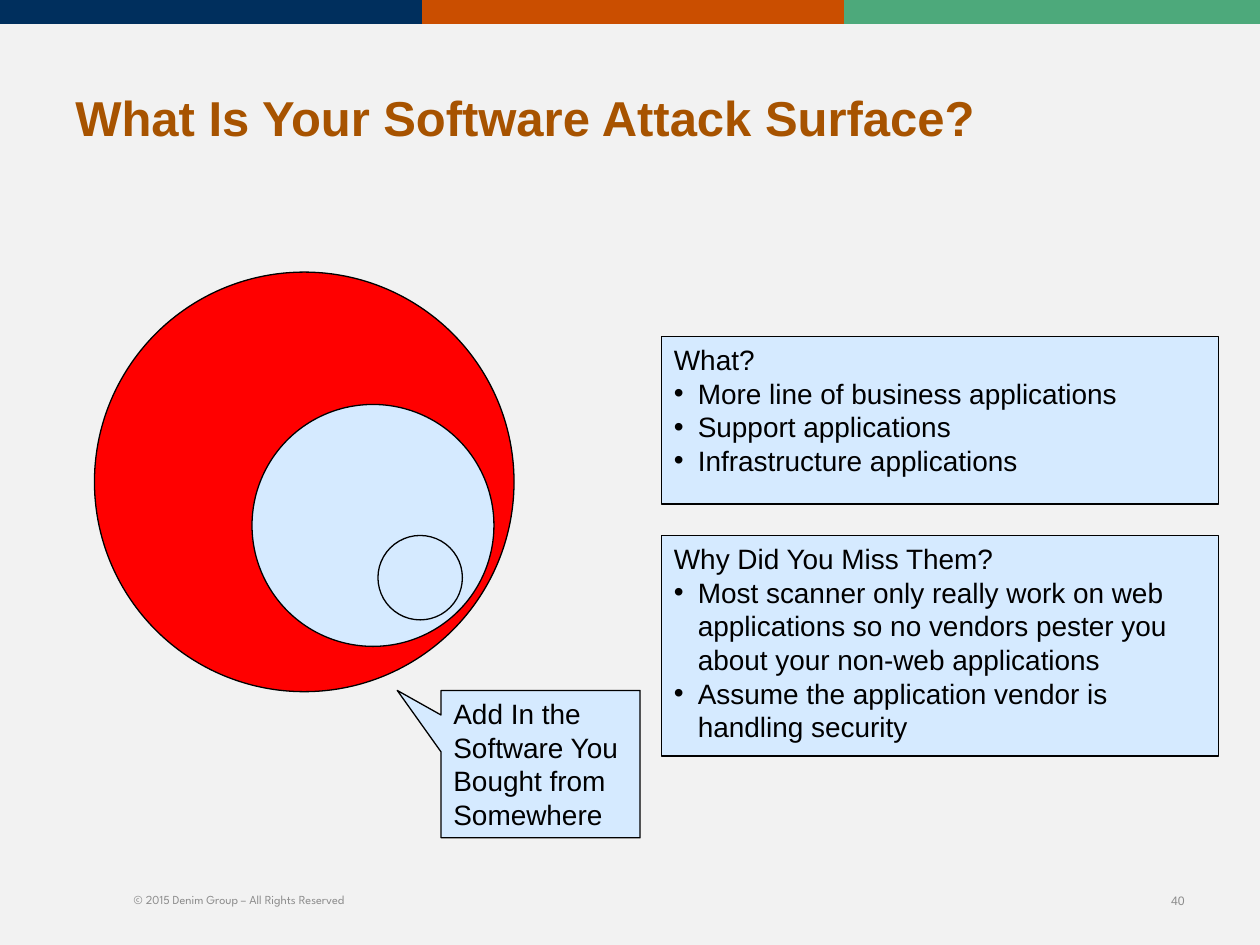
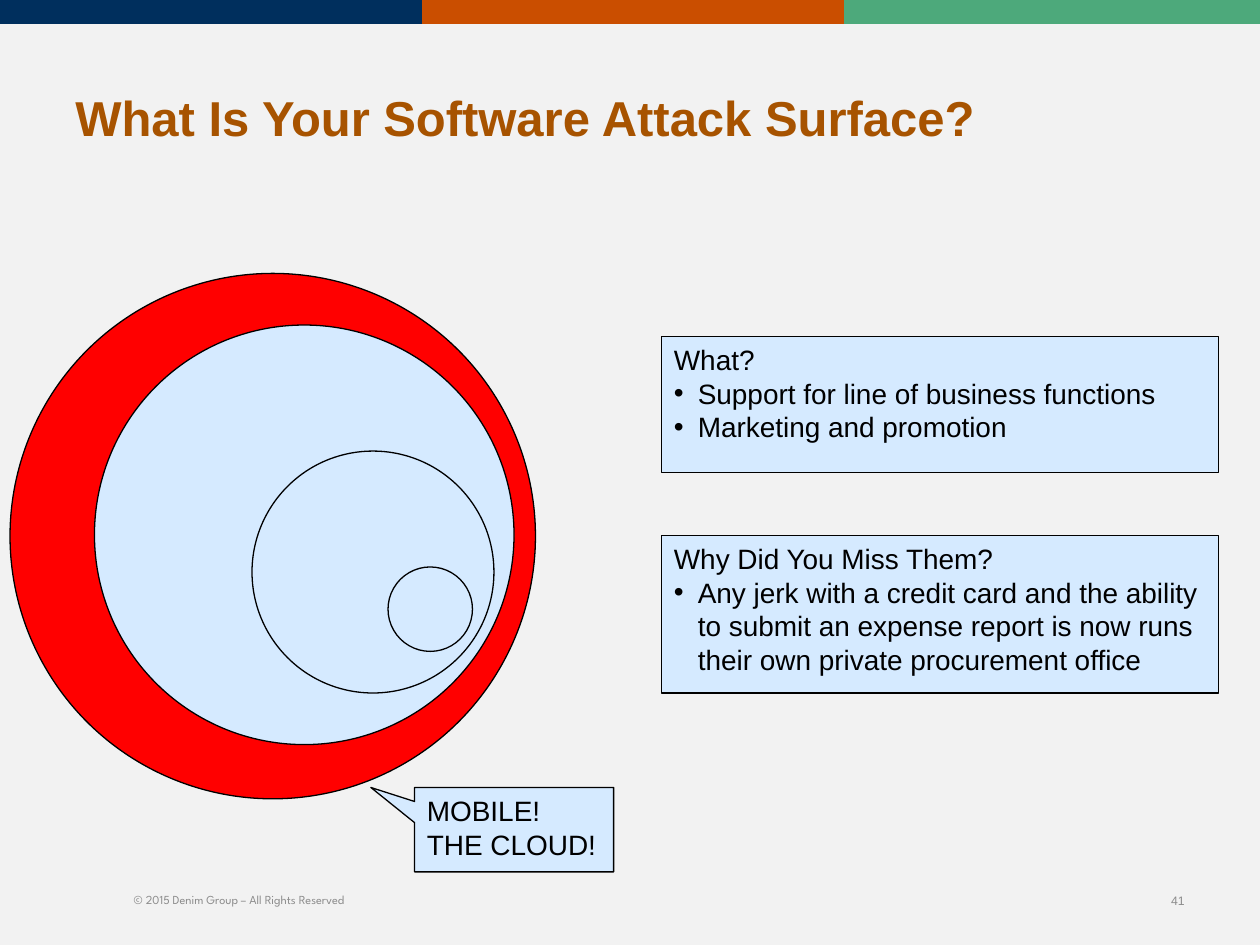
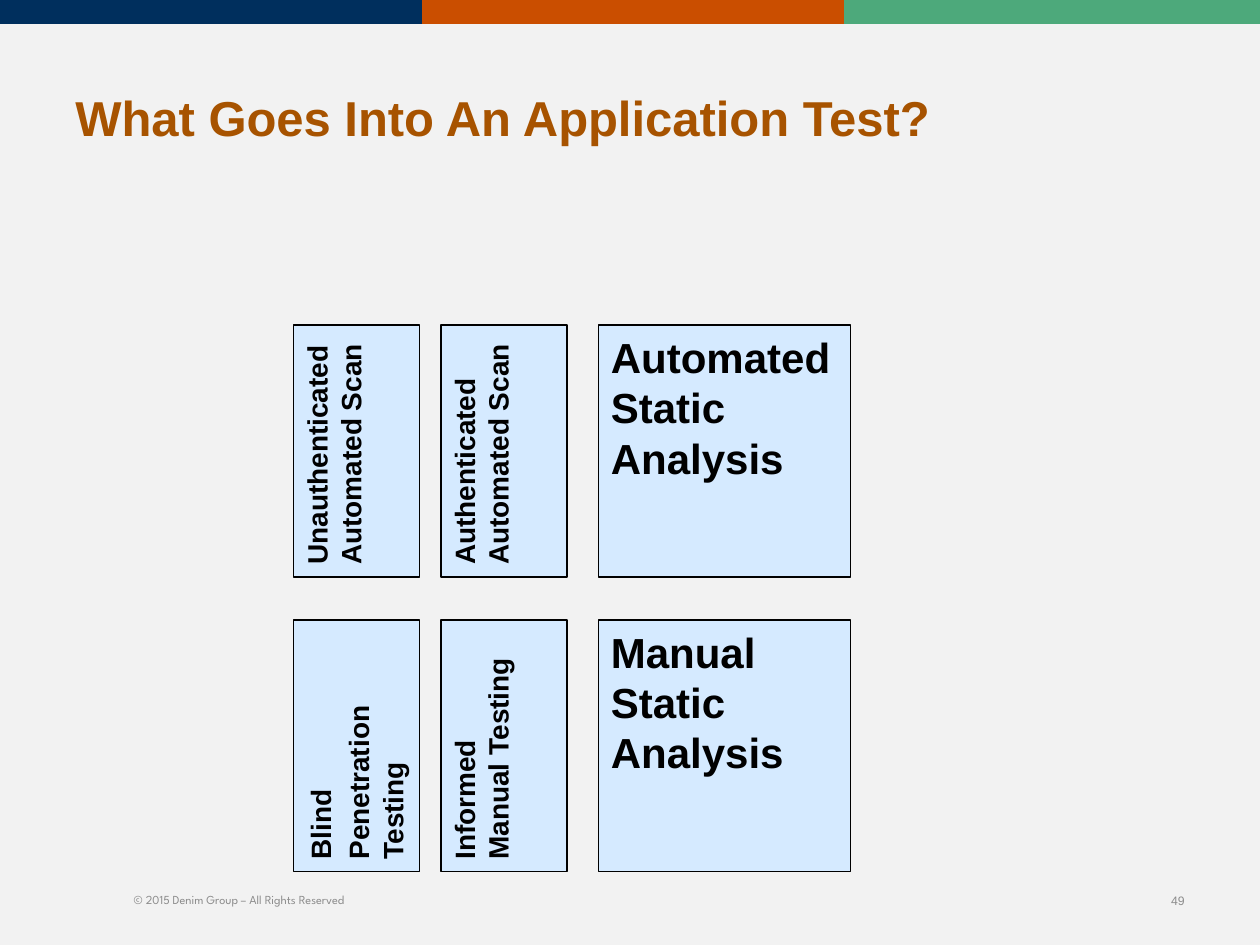
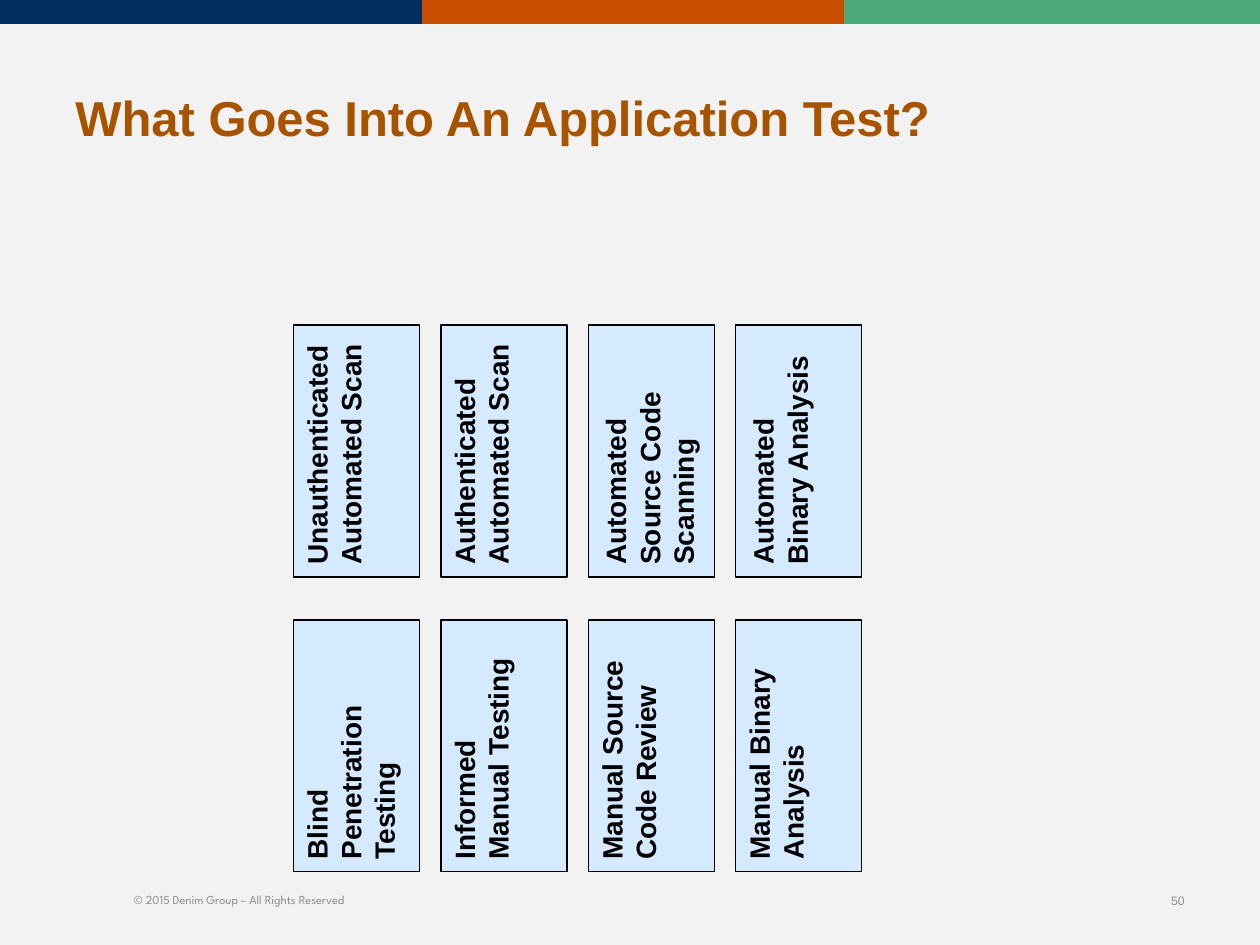
from lxml import etree
from pptx import Presentation
from pptx import util as u
from pptx.dml.color import RGBColor
from pptx.enum import shapes, text
from pptx.oxml.ns import qn

NAVY = RGBColor(0x00, 0x2F, 0x5D)
ORANGE = RGBColor(0xCA, 0x4E, 0x00)
GREEN = RGBColor(0x4D, 0xA9, 0x7B)
RUST = RGBColor(0xA7, 0x53, 0x00)
GRAY = RGBColor(0x8C, 0x8C, 0x8C)
PAPER = RGBColor(0xF2, 0xF2, 0xF2)
SKY = RGBColor(0xD5, 0xEA, 0xFF)
RED = RGBColor(0xFF, 0x00, 0x00)
BLACK = RGBColor(0x00, 0x00, 0x00)

KIND = shapes.MSO_SHAPE
MIDDLE = text.MSO_ANCHOR.MIDDLE
RIGHT = text.PP_ALIGN.RIGHT

COPYRIGHT = "© 2015 Denim Group – All Rights Reserved"
SURFACE_TITLE = "What Is Your Software Attack Surface?"
TEST_TITLE = "What Goes Into An Application Test?"
BANDS = [(NAVY, 3.35), (ORANGE, 3.35), (GREEN, 3.3)]

# Circles are (left, top, diameter), outermost first; panels are (top, height, lines).
SURFACES = [
    {
        "number": 40,
        "circles": [(0.75, 2.16, 3.33), (2, 3.21, 1.92), (3, 4.25, 0.67)],
        "callout": ((3.5, 5.48, 1.58, 1.17),
                    ["Add In the Software You Bought from Somewhere"]),
        "panels": [
            (2.67, 1.33, ["What?",
                          "More line of business applications",
                          "Support applications",
                          "Infrastructure applications"]),
            (4.25, 1.75, ["Why Did You Miss Them?",
                          "Most scanner only really work on web applications so no vendors "
                          "pester you about your non-web applications",
                          "Assume the application vendor is handling security"]),
        ],
    },
    {
        "number": 41,
        "circles": [(0.08, 2.17, 4.17), (0.75, 2.58, 3.33), (2, 3.58, 1.92), (3.08, 4.5, 0.67)],
        "callout": ((3.29, 6.25, 1.58, 0.67), ["MOBILE!", "THE CLOUD!"]),
        "panels": [
            (2.67, 1.08, ["What?",
                          "Support for line of business functions",
                          "Marketing and promotion"]),
            (4.25, 1.25, ["Why Did You Miss Them?",
                          "Any jerk with a credit card and the ability to submit an expense "
                          "report is now runs their own private procurement office"]),
        ],
    },
]

SCANS = [["Unauthenticated Automated Scan"], ["Authenticated Automated Scan"]]
INFORMED = ["Informed", "Manual Testing"]
TESTS = [
    {
        "number": 49,
        "narrow": [SCANS, [[("Blind", ""), ("Penetration", "Testing")], INFORMED]],
        "wide": ["Automated Static Analysis", "Manual Static Analysis"],
    },
    {
        "number": 50,
        "narrow": [
            SCANS + [[("Automated", "Source Code Scanning")], [("Automated", "Binary Analysis")]],
            [["Blind", "Penetration Testing"], INFORMED,
             ["Manual Source Code Review"], ["Manual Binary Analysis"]],
        ],
        "wide": [],
    },
]
GRID_LEFT, GRID_TOP = 2.33, 2.58
COLUMN_STEP, ROW_STEP = 1.17, 2.34
WIDE_LEFT, TILE = 4.75, 2
WORD_GAP_SIZE = 18


def add_bullet(paragraph):
    properties = paragraph._p.get_or_add_pPr()
    properties.set("marL", str(u.Inches(0.19)))
    properties.set("indent", str(u.Inches(-0.19)))
    etree.SubElement(properties, qn("a:buFont")).set("typeface", "Arial")
    etree.SubElement(properties, qn("a:buChar")).set("char", "•")


def write(holder, lines, size=16, color=BLACK, bold=False, font="Arial",
          align=text.PP_ALIGN.LEFT, anchor=text.MSO_ANCHOR.TOP, bullets=False, upward=False):
    frame = holder.text_frame
    frame.word_wrap = True
    frame.vertical_anchor = anchor
    if upward:
        frame._txBody.bodyPr.set("vert", "vert270")
    for i, line in enumerate(lines):
        paragraph = frame.paragraphs[0] if i == 0 else frame.add_paragraph()
        paragraph.alignment = align
        if bullets and i:
            add_bullet(paragraph)
        pieces = [(line, size)]
        if isinstance(line, tuple):
            before, after = line
            pieces = [(before, size), (" ", WORD_GAP_SIZE), (after, size)]
        for words, points in pieces:
            if words:
                run = paragraph.add_run()
                run.text = words
                run.font.size = u.Pt(points)
                run.font.name = font
                run.font.bold = bold
                run.font.color.rgb = color


def draw(slide, kind, place, fill=SKY, outlined=True):
    shape = slide.shapes.add_shape(kind, *map(u.Inches, place))
    shape.shadow.inherit = False
    shape.fill.solid()
    shape.fill.fore_color.rgb = fill
    if outlined:
        shape.line.color.rgb = BLACK
        shape.line.width = u.Pt(0.75)
    else:
        shape.line.fill.background()
    return shape


def label(slide, place, words, **style):
    write(slide.shapes.add_textbox(*map(u.Inches, place)), [words], anchor=MIDDLE, **style)


def start_slide(deck, title, number):
    slide = deck.slides.add_slide(deck.slide_layouts[6])
    slide.background.fill.solid()
    slide.background.fill.fore_color.rgb = PAPER
    left = 0
    for color, width in BANDS:
        draw(slide, KIND.RECTANGLE, (left, 0, width, 0.19), color, outlined=False)
        left += width
    label(slide, (0.5, 0.3, 9, 1.25), title, size=28, color=RUST, bold=True)
    label(slide, (0.5, 6.94, 2.33, 0.4), COPYRIGHT, size=7, color=GRAY,
          font="League Spartan", align=RIGHT)
    label(slide, (7.17, 6.95, 2.33, 0.4), str(number), size=7, color=GRAY, align=RIGHT)
    return slide


def add_surface(deck, surface):
    slide = start_slide(deck, SURFACE_TITLE, surface["number"])
    for i, (left, top, diameter) in enumerate(surface["circles"]):
        draw(slide, KIND.OVAL, (left, top, diameter, diameter), SKY if i else RED)
    place, lines = surface["callout"]
    callout = draw(slide, KIND.RECTANGULAR_CALLOUT, place)
    callout.adjustments[0] = -0.72
    callout.adjustments[1] = -0.5
    write(callout, lines)
    for top, height, lines in surface["panels"]:
        panel = draw(slide, KIND.RECTANGLE, (5.25, top, 4.42, height))
        write(panel, lines, bullets=True)


def add_test(deck, test):
    slide = start_slide(deck, TEST_TITLE, test["number"])
    for row, techniques in enumerate(test["narrow"]):
        for column, lines in enumerate(techniques):
            place = (GRID_LEFT + column * COLUMN_STEP, GRID_TOP + row * ROW_STEP, 1, TILE)
            write(draw(slide, KIND.RECTANGLE, place), lines, bold=True, upward=True)
    for row, analysis in enumerate(test["wide"]):
        place = (WIDE_LEFT, GRID_TOP + row * ROW_STEP, TILE, TILE)
        write(draw(slide, KIND.RECTANGLE, place), [analysis], size=24, bold=True)


def main():
    deck = Presentation()
    deck.slide_width, deck.slide_height = u.Inches(10), u.Inches(7.5)
    for surface in SURFACES:
        add_surface(deck, surface)
    for test in TESTS:
        add_test(deck, test)
    deck.save("out.pptx")


if __name__ == "__main__":
    main()
